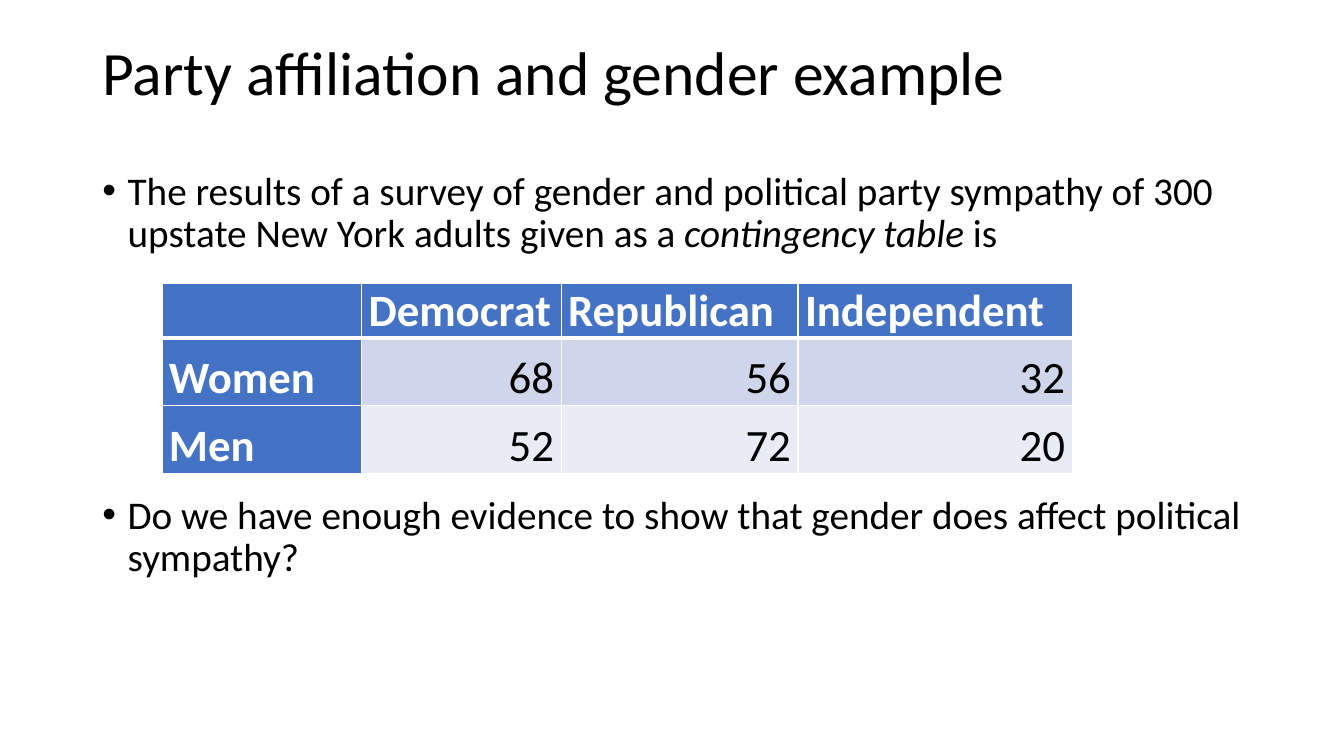
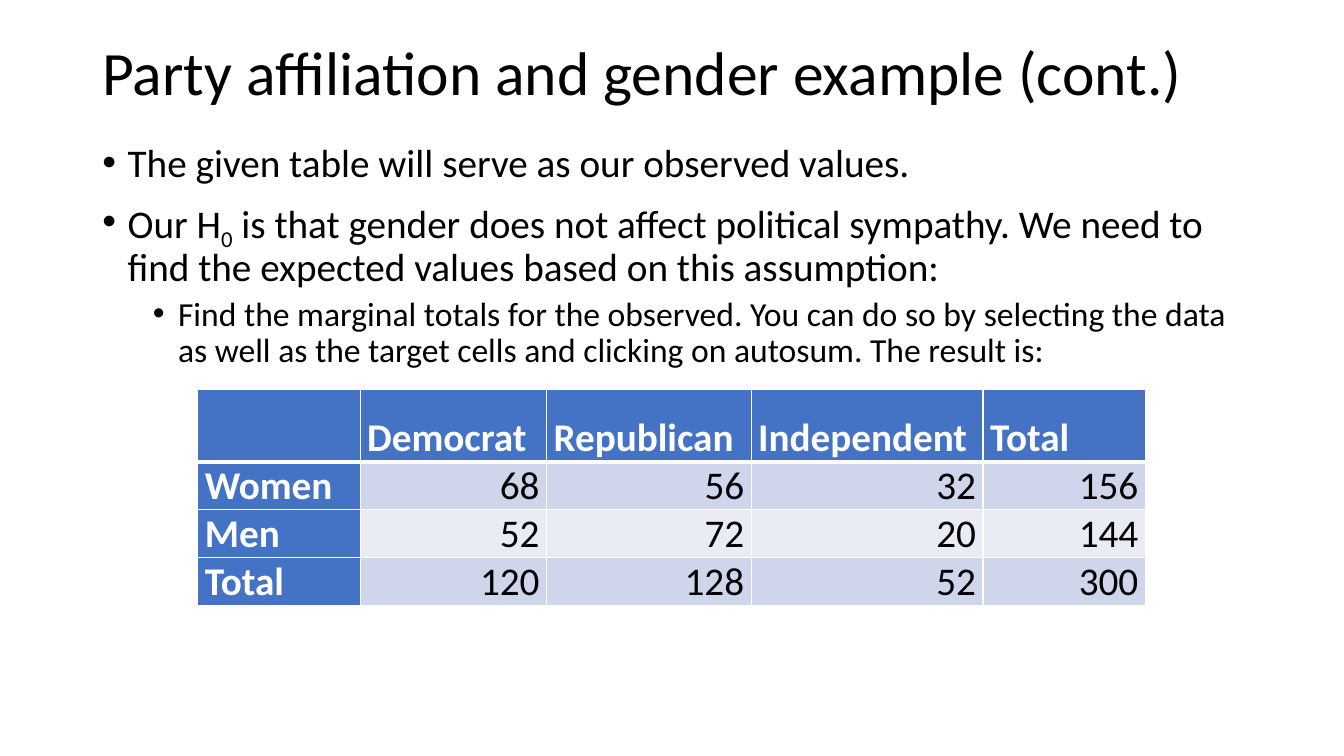
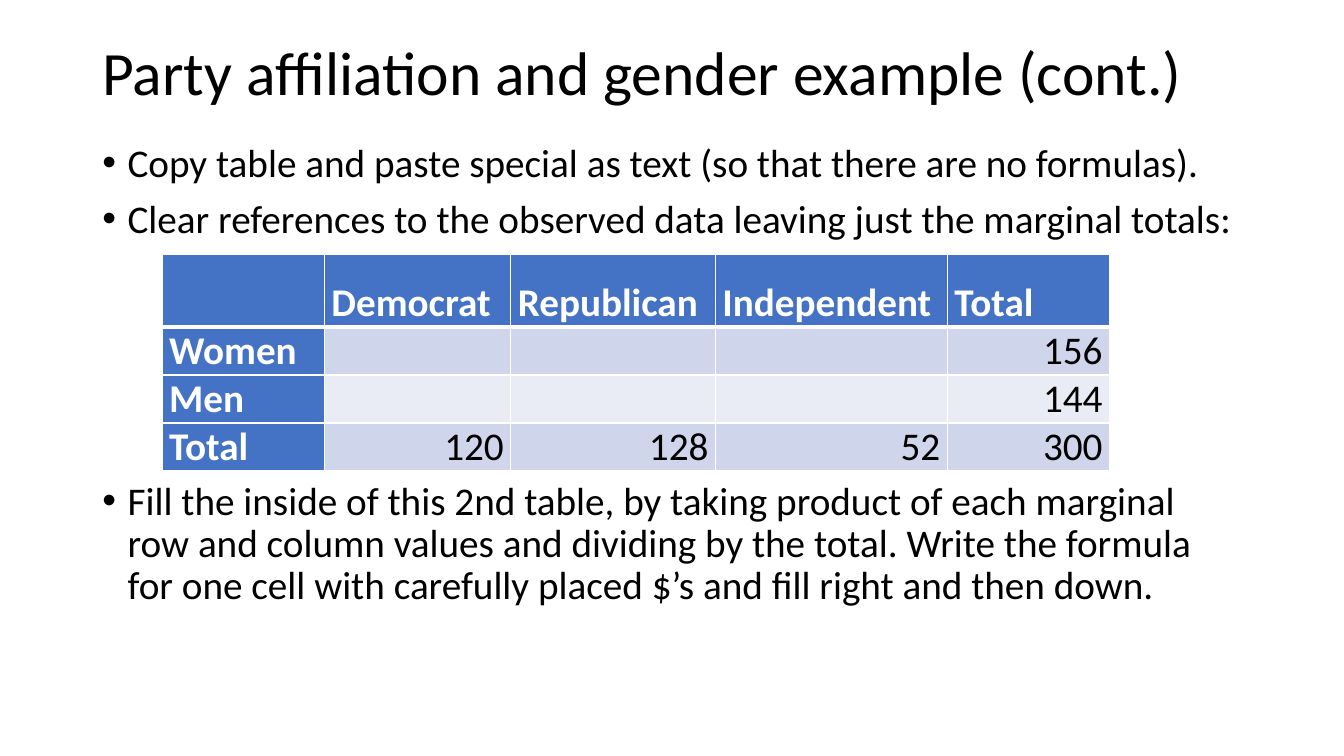
"""Build three slides on party affiliation and gender with contingency tables."""
from dataclasses import dataclass

from pptx import Presentation
from pptx.dml.color import RGBColor
from pptx.enum.text import MSO_ANCHOR as Anchor, MSO_AUTO_SIZE as AutoSize, PP_ALIGN as Align
from pptx.oxml.ns import qn
from pptx.oxml.xmlchemy import OxmlElement
from pptx.util import Inches, Pt

COLUMNS, ROWS = 160, 90
UNIT = Inches(1) / 12
FONT = "Calibri"
COLORS = {
    "text": "000000",
    "header": "4472C4",
    "header_text": "FFFFFF",
    "band_dark": "CFD5EA",
    "band_light": "E9EBF5",
    "rule": "FFFFFF",
}
LEVEL_SIZES = (28, 24)
LEVEL_GAPS = (10, 5)
TABLE_GAP = 171


@dataclass(frozen=True)
class Box:
    left: float
    top: float
    width: float
    height: float


@dataclass(frozen=True)
class Span:
    text: str
    italic: bool = False
    baseline: int = 0


@dataclass(frozen=True)
class Bullet:
    spans: tuple[Span, ...]
    level: int = 0
    after_table: bool = False


@dataclass(frozen=True)
class Contingency:
    left: float
    top: float
    widths: tuple[float, ...]
    heights: tuple[float, ...]
    size: int
    cells: tuple[tuple[str, ...], ...]


@dataclass(frozen=True)
class Page:
    title: str
    body: Box
    bullets: tuple[Bullet, ...]
    table: Contingency


TITLE_BOX = Box(11, 0.24, 138, 17.4)
FIRST_BODY = Box(11, 19.8, 138, 57.1)
NEXT_BODY = Box(11, 16.44, 138, 66.6)
TITLE = "Party affiliation and gender example"
PARTIES = ("", "Democrat", "Republican", "Independent")
TOTALS_HEADER = (*PARTIES, "Total")
TOTALS_ROW = ("Total", "120", "128", "52", "300")
TOTALS_WIDTHS = (19.32, 22.2, 24.36, 27.6, 19.32)
TOTALS_HEIGHTS = (8.64, 5.64, 5.64, 5.64)

PAGES = (
    Page(
        TITLE,
        FIRST_BODY,
        (
            Bullet((
                Span("The results of a survey of gender and political party sympathy of 300 "
                     "upstate New York adults given as a "),
                Span("contingency table", italic=True),
                Span(" is"),
            )),
            Bullet((Span("Do we have enough evidence to show that gender does affect "
                         "political sympathy?"),), after_table=True),
        ),
        Contingency(19.28, 33.75, (23.76, 23.76, 28.2, 32.64), (6.48, 8.04, 8.04), 32, (
            PARTIES,
            ("Women", "68", "56", "32"),
            ("Men", "52", "72", "20"),
        )),
    ),
    Page(
        f"{TITLE} (cont.)",
        NEXT_BODY,
        (
            Bullet((Span("The given table will serve as our observed values."),)),
            Bullet((
                Span("Our H"),
                Span("0", baseline=-25),
                Span(" is that gender does not affect political sympathy. We need to find "
                     "the expected values based on this assumption:"),
            )),
            Bullet((Span("Find the marginal totals for the observed. You can do so by "
                         "selecting the data as well as the target cells and clicking on "
                         "autosum. The result is:"),), level=1),
        ),
        Contingency(23.55, 46.35, TOTALS_WIDTHS, TOTALS_HEIGHTS, 28, (
            TOTALS_HEADER,
            ("Women", "68", "56", "32", "156"),
            ("Men", "52", "72", "20", "144"),
            TOTALS_ROW,
        )),
    ),
    Page(
        f"{TITLE} (cont.)",
        NEXT_BODY,
        (
            Bullet((Span("Copy table and paste special as text (so that there are no "
                         "formulas)."),)),
            Bullet((Span("Clear references to the observed data leaving just the marginal "
                         "totals:"),)),
            Bullet((Span("Fill the inside of this 2nd table, by taking product of each "
                         "marginal row and column values and dividing by the total. Write "
                         "the formula for one cell with carefully placed $’s and fill right "
                         "and then down."),), after_table=True),
        ),
        Contingency(19.3, 30.3, TOTALS_WIDTHS, TOTALS_HEIGHTS, 28, (
            TOTALS_HEADER,
            ("Women", "", "", "", "156"),
            ("Men", "", "", "", "144"),
            TOTALS_ROW,
        )),
    ),
)


def units(count: float) -> int:
    return round(count * UNIT)


def place(holder, box: Box, anchor: Anchor) -> None:
    holder.left, holder.top = units(box.left), units(box.top)
    holder.width, holder.height = units(box.width), units(box.height)
    frame = holder.text_frame
    frame.word_wrap = True
    frame.auto_size = AutoSize.NONE
    frame.vertical_anchor = anchor


def add_span(paragraph, span: Span, size: int, color: str = "text", bold: bool = False) -> None:
    run = paragraph.add_run()
    run.text = span.text
    font = run.font
    font.name, font.size = FONT, Pt(size)
    font.bold, font.italic = bold, span.italic
    font.color.rgb = RGBColor.from_string(COLORS[color])
    if span.baseline:
        font._element.set("baseline", str(span.baseline * 1000))


def add_title(slide, title: str) -> None:
    holder = slide.shapes.title
    place(holder, TITLE_BOX, Anchor.MIDDLE)
    heading = holder.text_frame.paragraphs[0]
    heading.alignment = Align.LEFT
    heading.line_spacing = 0.9
    add_span(heading, Span(title), 44)


def format_bullet(paragraph, bullet: Bullet) -> None:
    paragraph.level = bullet.level
    paragraph.line_spacing = 0.9
    paragraph.space_before = Pt(TABLE_GAP if bullet.after_table else LEVEL_GAPS[bullet.level])
    properties = paragraph._p.get_or_add_pPr()
    properties.set("marL", str(units(3 + 6 * bullet.level)))
    properties.set("indent", str(units(-3)))
    for tag, key, value in (("a:buFont", "typeface", "Arial"), ("a:buChar", "char", "•")):
        mark = OxmlElement(tag)
        mark.set(key, value)
        properties.append(mark)


def add_bullets(slide, box: Box, bullets: tuple[Bullet, ...]) -> None:
    holder = slide.placeholders[1]
    place(holder, box, Anchor.TOP)
    frame = holder.text_frame
    for index, bullet in enumerate(bullets):
        paragraph = frame.add_paragraph() if index else frame.paragraphs[0]
        format_bullet(paragraph, bullet)
        for span in bullet.spans:
            add_span(paragraph, span, LEVEL_SIZES[bullet.level])


def add_borders(cell, row: int) -> None:
    properties = cell._tc.get_or_add_tcPr()
    weights = {"L": 1, "R": 1, "T": 3 if row == 1 else 1, "B": 3 if row == 0 else 1}
    for side, weight in weights.items():
        line = OxmlElement(f"a:ln{side}")
        line.set("w", str(Pt(weight)))
        fill = OxmlElement("a:solidFill")
        color = OxmlElement("a:srgbClr")
        color.set("val", COLORS["rule"])
        fill.append(color)
        line.append(fill)
        properties.append(line)


def fill_cell(cell, text: str, row: int, column: int, size: int) -> None:
    is_header = row == 0 or column == 0
    band = "band_dark" if row % 2 else "band_light"
    add_borders(cell, row)
    cell.fill.solid()
    cell.fill.fore_color.rgb = RGBColor.from_string(COLORS["header" if is_header else band])
    cell.vertical_anchor = Anchor.BOTTOM
    cell.margin_left = cell.margin_right = Inches(0.07)
    cell.margin_top = cell.margin_bottom = 0
    if text:
        entry = cell.text_frame.paragraphs[0]
        entry.alignment = Align.LEFT if is_header else Align.RIGHT
        add_span(entry, Span(text), size, "header_text" if is_header else "text", is_header)


def add_contingency(slide, survey: Contingency) -> None:
    table = slide.shapes.add_table(
        len(survey.heights), len(survey.widths), units(survey.left), units(survey.top),
        units(sum(survey.widths)), units(sum(survey.heights)),
    ).table
    table.first_col = True
    for column, width in zip(table.columns, survey.widths):
        column.width = units(width)
    for row, height in zip(table.rows, survey.heights):
        row.height = units(height)
    for row, entries in enumerate(survey.cells):
        for column, text in enumerate(entries):
            fill_cell(table.cell(row, column), text, row, column, survey.size)


def main() -> None:
    deck = Presentation()
    deck.slide_width, deck.slide_height = units(COLUMNS), units(ROWS)
    for page in PAGES:
        slide = deck.slides.add_slide(deck.slide_layouts[1])
        add_title(slide, page.title)
        add_bullets(slide, page.body, page.bullets)
        add_contingency(slide, page.table)
    deck.save("out.pptx")


if __name__ == "__main__":
    main()
